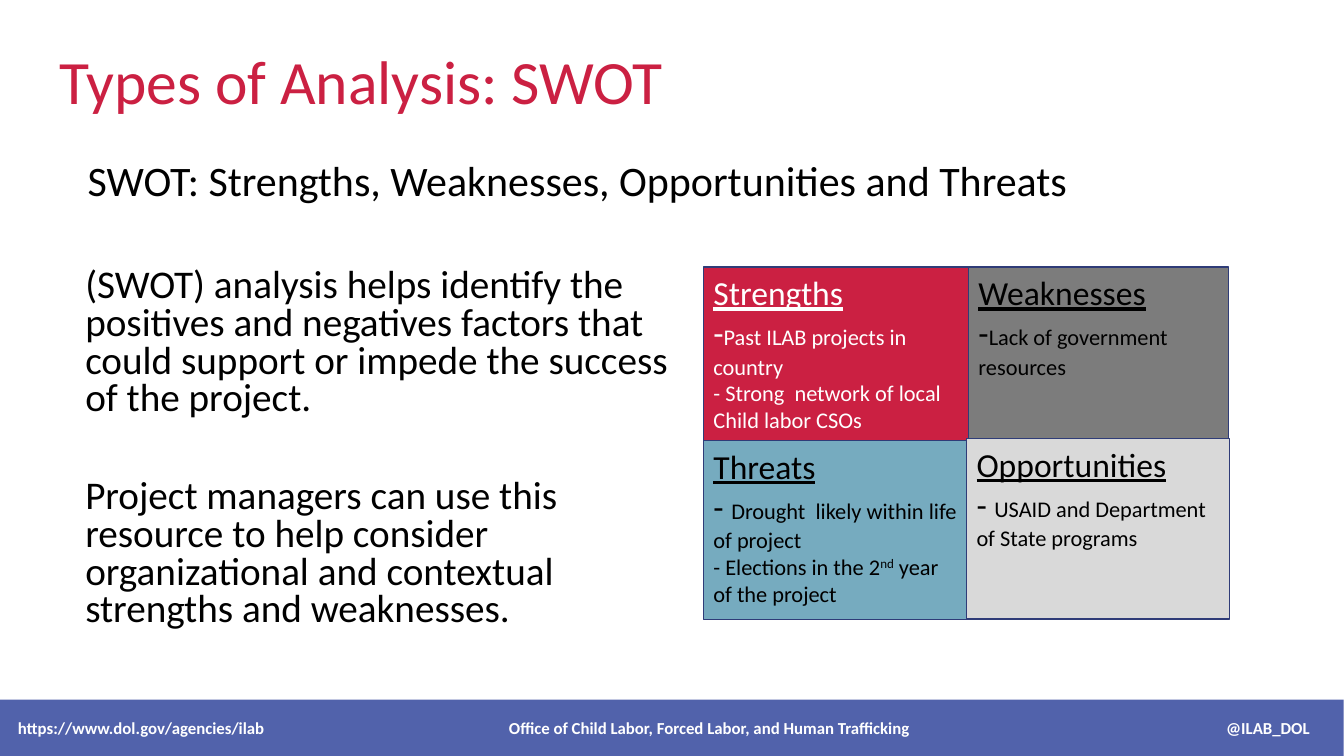
from lxml import etree
from pptx import Presentation
from pptx.dml.color import RGBColor
from pptx.enum import shapes, text
from pptx.oxml.ns import qn
from pptx.util import Cm, Pt

FONT = "Calibri"
RED, BLACK, WHITE = "CB2042", "000000", "FFFFFF"
BORDER, FOOTER_BLUE = "2F3C78", "3F51A2"

# heading, fill, text colour, (left, top, width, height) in cm, points
# Each point is a list of (words, size, superscript) runs.
QUADRANTS = [
    ("Strengths", RED, WHITE, (17.73, 6.73, 6.68, 4.42),
     [[("-", 24, False), ("Past ILAB projects in country", 16, False)],
      [("- Strong  network of local Child labor CSOs", 16, False)]]),
    ("Weaknesses", "7C7C7C", BLACK, (24.41, 6.73, 6.55, 4.37),
     [[("-", 24, False), ("Lack of government resources", 16, False)]]),
    ("Threats", "76ABBF", BLACK, (17.73, 11.1, 6.68, 4.52),
     [[("- ", 24, False), ("Drought  likely within life of project", 16, False)],
      [("- Elections in the 2", 16, False), ("nd", 16, True),
       (" year of the project", 16, False)]]),
    ("Opportunities", "D9D9D9", BLACK, (24.36, 11.05, 6.63, 4.55),
     [[("- ", 24, False),
       ("USAID and Department of State programs", 16, False)]]),
]

EXPLANATION = [
    "(SWOT) analysis helps identify the positives and negatives factors that "
    "could support or impede the success of the project.",
    "Project managers can use this resource to help consider organizational "
    "and contextual strengths and weaknesses.",
]

FOOTER_PARTS = ["https://www.dol.gov/agencies/ilab",
                "Office of Child Labor, Forced Labor, and Human Trafficking",
                "@ILAB_DOL"]


def colour(hex_string):
    return RGBColor.from_string(hex_string)


def add_run(paragraph, words, size, hue, underline=False, bold=False,
            superscript=False):
    run = paragraph.add_run()
    run.text = words
    run.font.name = FONT
    run.font.size = Pt(size)
    run.font.color.rgb = colour(hue)
    run.font.underline = underline
    run.font.bold = bold
    if superscript:
        run.font._element.set("baseline", "30000")


def add_text(slide, box, paragraphs, size, hue, line_spacing=1.0, gap=0,
             anchor=text.MSO_ANCHOR.TOP):
    """Add a wrapped text box with gap points between its paragraphs."""
    frame = slide.shapes.add_textbox(*map(Cm, box)).text_frame
    frame.word_wrap = True
    frame.vertical_anchor = anchor
    for index, words in enumerate(paragraphs):
        paragraph = frame.add_paragraph() if index else frame.paragraphs[0]
        paragraph.line_spacing = line_spacing
        paragraph.space_before = Pt(gap if index else 0)
        add_run(paragraph, words, size, hue)


def add_panel(slide, box, fill, anchor):
    panel = slide.shapes.add_shape(shapes.MSO_SHAPE.RECTANGLE, *map(Cm, box))
    panel.shadow.inherit = False
    panel.fill.solid()
    panel.fill.fore_color.rgb = colour(fill)
    panel.text_frame.word_wrap = True
    panel.text_frame.vertical_anchor = anchor
    panel.text_frame.paragraphs[0].alignment = text.PP_ALIGN.LEFT
    return panel


def add_quadrant(slide, heading, fill, hue, box, points):
    panel = add_panel(slide, box, fill, text.MSO_ANCHOR.TOP)
    panel.line.color.rgb = colour(BORDER)
    panel.line.width = Pt(1)
    frame = panel.text_frame
    add_run(frame.paragraphs[0], heading, 24, hue, underline=True)
    for point in points:
        paragraph = frame.add_paragraph()
        paragraph.alignment = text.PP_ALIGN.LEFT
        for words, size, superscript in point:
            add_run(paragraph, words, size, hue, superscript=superscript)


def add_footer(slide):
    """Add the see-through bar, its parts set by centre and right tab stops."""
    bar = add_panel(slide, (-0.1, 17.63, 33.96, 1.42), FOOTER_BLUE,
                    text.MSO_ANCHOR.MIDDLE)
    bar.line.fill.background()
    fill_hue = bar.fill._xPr.find(qn("a:solidFill"))[0]
    etree.SubElement(fill_hue, qn("a:alpha"), val="90000")
    bar.text_frame.margin_left = Cm(0.55)
    paragraph = bar.text_frame.paragraphs[0]
    tabs = etree.SubElement(paragraph._p.get_or_add_pPr(), qn("a:tabLst"))
    for position, align in ((17.43, "ctr"), (32.56, "r")):
        etree.SubElement(tabs, qn("a:tab"), pos=str(Cm(position)), algn=align)
    add_run(paragraph, "\t".join(FOOTER_PARTS), 12, WHITE, bold=True)


def main():
    deck = Presentation()
    deck.slide_width, deck.slide_height = Cm(33.87), Cm(19.05)
    slide = deck.slides.add_slide(deck.slide_layouts[6])
    add_text(slide, (1.24, 0.66, 24.38, 2.92), ["Types of Analysis: SWOT"],
             44, RED, line_spacing=0.9, anchor=text.MSO_ANCHOR.MIDDLE)
    add_text(slide, (1.96, 3.76, 27.15, 3.15),
             ["SWOT: Strengths, Weaknesses, Opportunities and Threats"],
             30, BLACK)
    add_text(slide, (1.9, 6.65, 15.37, 10.2), EXPLANATION, 28, BLACK,
             line_spacing=0.8, gap=43)
    for quadrant in QUADRANTS:
        add_quadrant(slide, *quadrant)
    add_footer(slide)
    deck.save("out.pptx")


if __name__ == "__main__":
    main()
